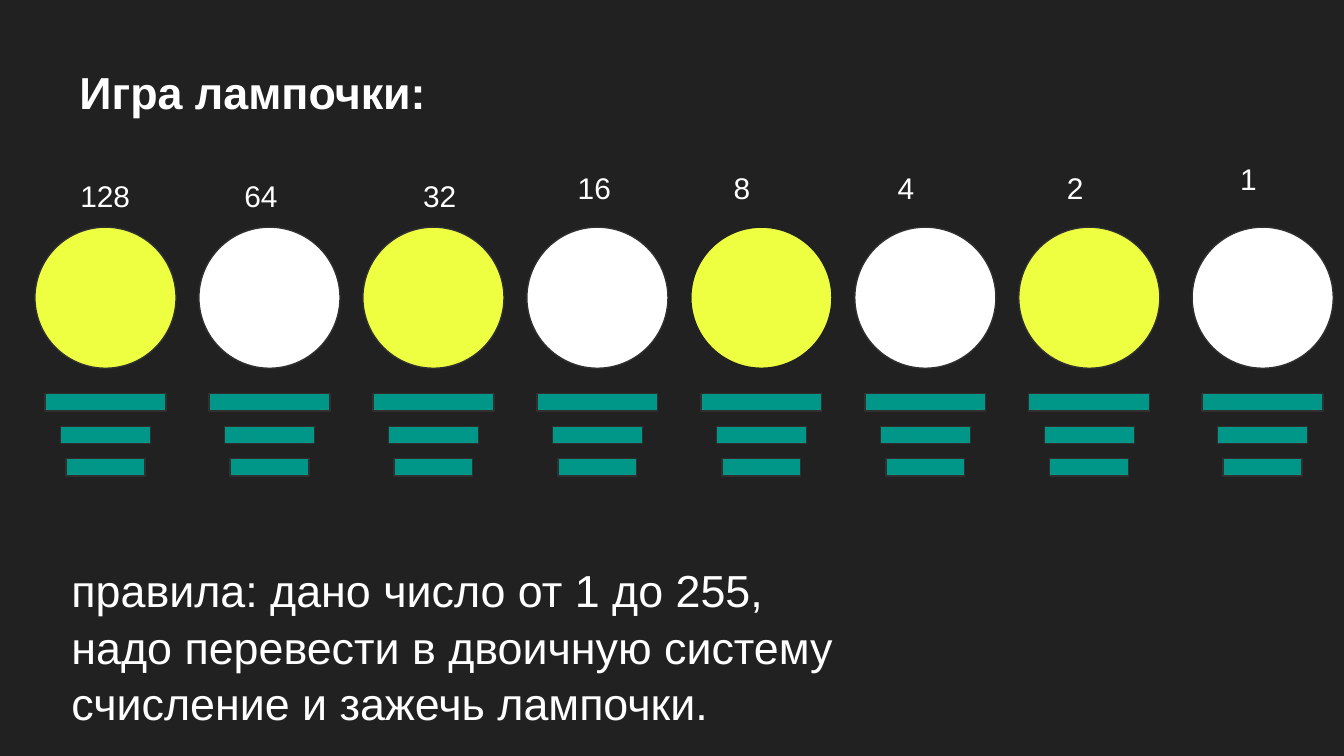
from pptx import Presentation
from pptx.dml.color import RGBColor
from pptx.enum.shapes import MSO_SHAPE as Shape
from pptx.util import Pt

BACKGROUND = RGBColor(0x21, 0x21, 0x21)
OUTLINE = RGBColor(0x30, 0x30, 0x30)
TEAL = RGBColor(0x00, 0x96, 0x88)
YELLOW = RGBColor(0xEE, 0xFF, 0x41)
WHITE = RGBColor(0xFF, 0xFF, 0xFF)

BULB_SIZE = 75.6
BULB_PITCH = 87.84
BULB_LEFT = 18.72
LAST_BULB_LEFT = 638.64
BULB_TOP = 121.68
BAR_TOP = 89.28
BAR_PITCH = 17.4
BAR_HEIGHT = 9.2
BAR_WIDTHS = (64.8, 48.2, 42.3)

LABELS = (
    ("128", 36, 87.84, 83.5),
    ("64", 123.84, 87.84, 65.5),
    ("32", 219.6, 87.84, 58.3),
    ("16", 302.4, 83.9, 58.3),
    ("8", 385.92, 83.9, 43.2),
    ("4", 473.76, 83.9, 43.2),
    ("2", 564.48, 83.9, 43.2),
    ("1", 657.36, 78.9, 43.2),
)


def add_text(s, text, box, **font):
    tf = s.shapes.add_textbox(*map(Pt, box)).text_frame
    tf.word_wrap = True
    for side in ("left", "right", "top", "bottom"):
        setattr(tf, f"margin_{side}", Pt(7.2))
    p = tf.paragraphs[0]
    r = p.add_run()
    r.text = text
    r.font.color.rgb = WHITE
    for name, value in {"name": "Arial", **font}.items():
        setattr(r.font, name, value)
    return p


def add_filled(s, kind, box, fill, line=OUTLINE):
    sp = s.shapes.add_shape(kind, *map(Pt, box))
    sp.shadow.inherit = False
    sp.fill.solid()
    sp.fill.fore_color.rgb = fill
    sp.line.color.rgb = line
    sp.line.width = Pt(0.75)


def add_lamp(s, left, top, size, color, line):
    for row, width in enumerate(BAR_WIDTHS):
        box = (left + (size - width) / 2, top + BAR_TOP + row * BAR_PITCH,
               width, BAR_HEIGHT)
        add_filled(s, Shape.RECTANGLE, box, TEAL)
    add_filled(s, Shape.OVAL, (left, top, size, size), color, line)


def add_lamps(s, left, top):
    last = len(LABELS) - 1
    for i, (label, x, y, width) in enumerate(LABELS):
        lamp_left = LAST_BULB_LEFT if i == last else left + i * BULB_PITCH
        color = WHITE if i % 2 else YELLOW
        line = BACKGROUND if label == "8" else OUTLINE
        add_lamp(s, lamp_left, top, BULB_SIZE, color, line)
        add_text(s, label, (x, y, width, 33.8), size=Pt(16))


def main():
    prs = Presentation()
    prs.slide_width, prs.slide_height = Pt(720), Pt(405)
    s = prs.slides.add_slide(prs.slide_layouts[6])
    s.background.fill.solid()
    s.background.fill.fore_color.rgb = BACKGROUND
    add_text(s, "Игра лампочки:", (35.5, 27.6, 486, 43.9),
             size=Pt(24), bold=True)
    add_lamps(s, BULB_LEFT, BULB_TOP)
    rules = add_text(
        s,
        "правила: дано число от 1 до 255, надо перевести в двоичную "
        "систему счисление и зажечь лампочки.",
        (31.2, 293, 443, 101.5), size=Pt(24))
    rules.line_spacing = 1.05
    prs.save("out.pptx")


if __name__ == "__main__":
    main()
